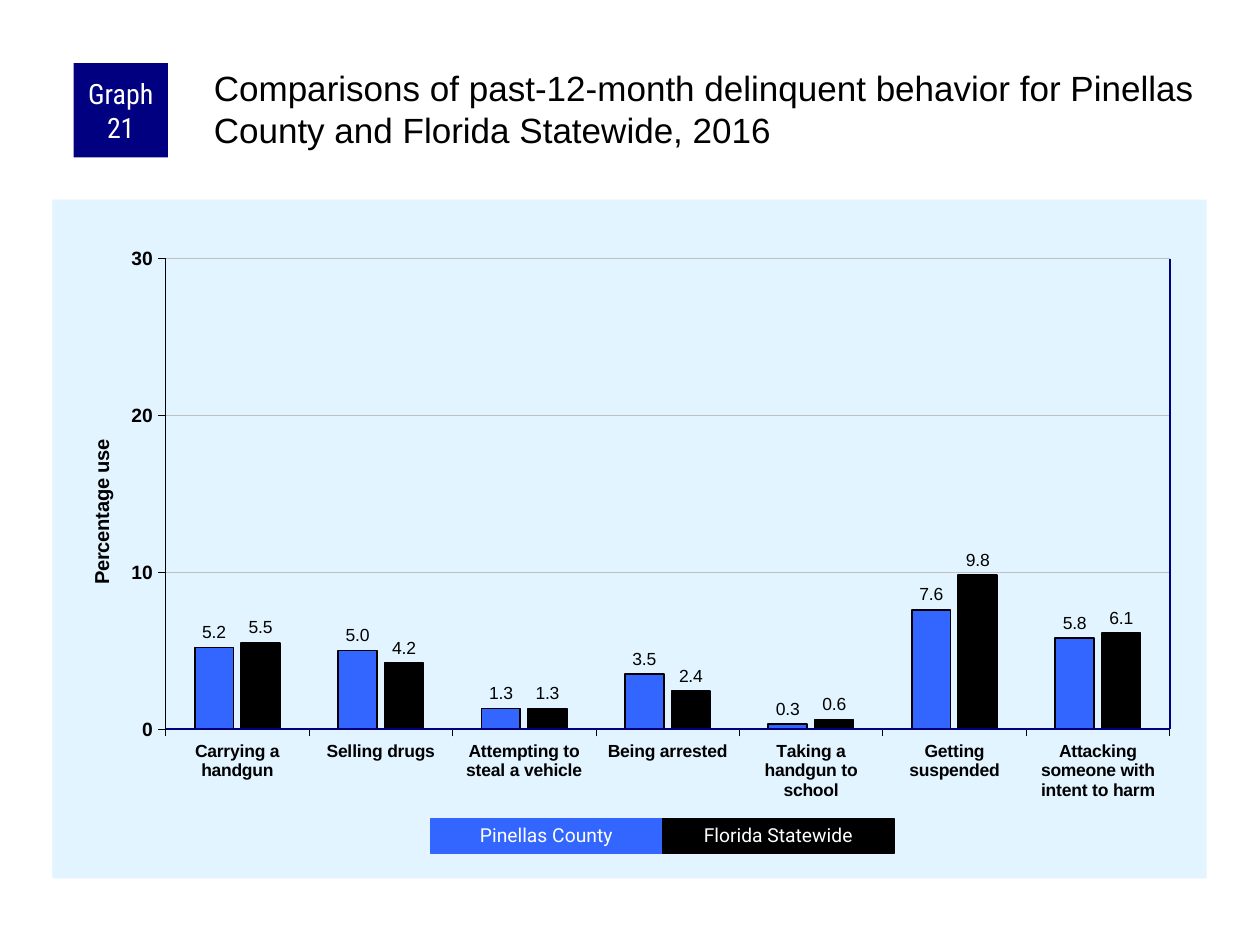
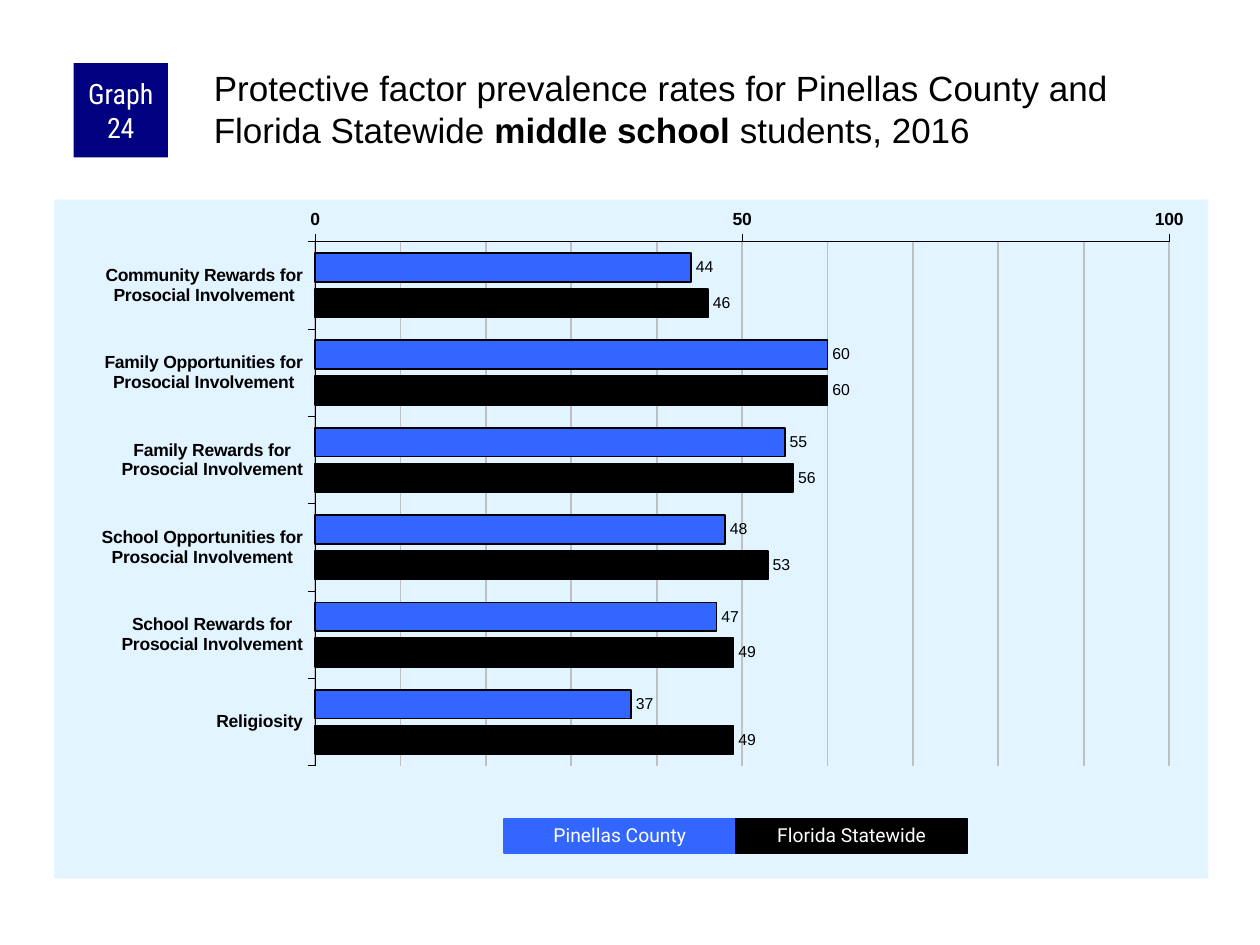
"""Build two slides that compare Pinellas County with Florida Statewide."""
from copy import deepcopy
from lxml import etree
from pptx import Presentation
from pptx.chart.data import CategoryChartData as Data
from pptx.dml.color import RGBColor as Rgb
from pptx.enum.chart import XL_AXIS_CROSSES as Cross
from pptx.enum.chart import XL_CHART_TYPE as Kind
from pptx.enum.chart import XL_LABEL_POSITION as Place
from pptx.enum.chart import XL_TICK_MARK as Tick
from pptx.enum.shapes import MSO_CONNECTOR as Link
from pptx.enum.shapes import MSO_SHAPE as Form
from pptx.enum.text import MSO_ANCHOR as Anchor
from pptx.enum.text import PP_ALIGN as Align
from pptx.oxml import parse_xml
from pptx.oxml.ns import nsdecls, qn
from pptx.util import Pt

HUES = {"navy": "000080", "blue": "3366FF", "black": "000000",
        "white": "FFFFFF", "grid": "C0C0C0", "panel": "E1F4FF"}
WIDE, HIGH, TOP = 659.5, 388, 114
KEYS = [("Pinellas County", "blue"), ("Florida Statewide", "black")]
KEY_W = 132.5

SLIDES = [
    {"badge": "Graph 21",
     "title": [("Comparisons of past-12-month delinquent behavior for "
                "Pinellas County and Florida Statewide, 2016", False)],
     "kind": Kind.COLUMN_CLUSTERED, "left": 30, "key": 246,
     "cats": ["Carrying a handgun", "Selling drugs",
              "Attempting to steal a vehicle", "Being arrested",
              "Taking a handgun to school", "Getting suspended",
              "Attacking someone with intent to harm"],
     "vals": [(5.2, 5, 1.3, 3.5, 0.3, 7.6, 5.8),
              (5.5, 4.2, 1.3, 2.4, 0.6, 9.8, 6.1)],
     "plot": (0.098, 0.087, 0.87, 0.693), "gap": 150, "lap": -20,
     "max": 30, "step": 10, "size": 11, "form": "0.0", "label": 10,
     "grid": 0.25, "edges": [("right", "navy", 1), ("base", "navy", 1)]},
    {"badge": "Graph 24",
     "title": [("Protective factor prevalence rates for Pinellas County "
                "and Florida Statewide ", False),
               ("middle school ", True), ("students, 2016", False)],
     "kind": Kind.BAR_CLUSTERED, "left": 31, "key": 288,
     "cats": ["Community Rewards for\nProsocial Involvement",
              "Family Opportunities for\nProsocial Involvement",
              "Family Rewards for\nProsocial Involvement",
              "School Opportunities for\nProsocial Involvement",
              "School Rewards for\nProsocial Involvement",
              "Religiosity"],
     "vals": [(44, 60, 55, 48, 47, 37), (46, 60, 56, 53, 49, 49)],
     "plot": (0.226, 0.062, 0.74, 0.772), "gap": 80, "lap": -25,
     "max": 100, "step": 50, "size": 10, "form": "0", "label": 9,
     "grid": 1, "edges": [("top", "black", 0.25)]},
]


def style(font, size, hue="black", bold=False, name="Arial"):
    font.size, font.bold, font.name = Pt(size), bold, name
    font.color.rgb = Rgb.from_string(HUES[hue])


def lay(node, spot, **sizes):
    for old in node.findall(qn("c:layout")):
        node.remove(old)
    new = parse_xml(f"<c:layout {nsdecls('c')}><c:manualLayout/></c:layout>")
    tags = {"layoutTarget": "inner"} if "w" in sizes else {}
    tags.update(xMode="edge", yMode="edge", **sizes)
    for tag, val in tags.items():
        etree.SubElement(new[0], qn("c:" + tag)).set("val", str(val))
    node.insert(spot, new)


deck = Presentation()
deck.slide_width, deck.slide_height = Pt(720), Pt(540)

for page in SLIDES:
    shapes = deck.slides.add_slide(deck.slide_layouts[6]).shapes

    data = Data()
    data.categories = page["cats"]
    for num, vals in enumerate(page["vals"], 1):
        data.add_series(f"Series {num}", vals)
    left = page["left"]
    chart = shapes.add_chart(page["kind"], Pt(left), Pt(TOP),
                             Pt(WIDE), Pt(HIGH), data).chart
    chart.has_legend = chart.has_title = False
    style(chart.font, 11.5)
    root = chart.element.find(qn("c:chart"))
    root.addnext(parse_xml(
        f'<c:spPr {nsdecls("c", "a")}><a:solidFill><a:srgbClr '
        f'val="{HUES["panel"]}"/></a:solidFill><a:ln><a:noFill/></a:ln></c:spPr>'))
    px, py, pw, ph = page["plot"]
    lay(root.find(qn("c:plotArea")), 0, x=px, y=py, w=pw, h=ph)

    plot = chart.plots[0]
    plot.gap_width, plot.overlap = page["gap"], page["lap"]
    plot.vary_by_categories = False
    for row, (_, hue) in zip(plot.series, KEYS):
        row.format.fill.solid()
        row.format.fill.fore_color.rgb = Rgb.from_string(HUES[hue])
        row.format.line.color.rgb = Rgb.from_string(HUES["black"])
        row.format.line.width = Pt(1)
        labels = row.data_labels
        labels.show_value = True
        labels.position = Place.OUTSIDE_END
        labels.number_format = page["form"]
        labels.number_format_is_linked = False
        style(labels.font, page["label"])

    cat, val = chart.category_axis, chart.value_axis
    for axis, size in ((cat, 10), (val, page["size"])):
        axis.major_tick_mark, axis.minor_tick_mark = Tick.OUTSIDE, Tick.NONE
        axis.format.line.color.rgb = Rgb.from_string(HUES["black"])
        axis.format.line.width = Pt(0.25)
        style(axis.tick_labels.font, size, bold=True)
    val.minimum_scale, val.maximum_scale = 0, page["max"]
    val.major_unit, val.minor_unit = page["step"], 10
    val.has_major_gridlines = True
    grid = val.major_gridlines.format.line
    grid.color.rgb = Rgb.from_string(HUES["grid"])
    grid.width = Pt(page["grid"])
    if page["kind"] == Kind.BAR_CLUSTERED:
        cat.reverse_order = True
        cat.crosses = Cross.MAXIMUM
        major = root.find(".//" + qn("c:majorGridlines"))
        minor = etree.Element(qn("c:minorGridlines"))
        minor.append(deepcopy(major[0]))
        major.addnext(minor)
    else:
        run = val.axis_title.text_frame.paragraphs[0].add_run()
        run.text = "Percentage use"
        style(run.font, 11.5, bold=True)
        lay(val.axis_title.element, 1, x=0.028, y=0.348)

    x1, y1 = left + px * WIDE, TOP + py * HIGH
    x2, y2 = x1 + pw * WIDE, y1 + ph * HIGH
    sides = {"right": (x2, y1, x2, y2), "base": (x1, y2, x2, y2),
             "top": (x1, y1, x2, y1)}
    for side, hue, width in page["edges"]:
        edge = shapes.add_connector(Link.STRAIGHT, *map(Pt, sides[side]))
        edge.line.color.rgb = Rgb.from_string(HUES[hue])
        edge.line.width = Pt(width)
        etree.SubElement(edge.element.spPr, qn("a:effectLst"))

    boxes = [(page["badge"], "navy", 42, 36, 54, 54, 16, "Roboto Condensed")]
    for num, (text, hue) in enumerate(KEYS):
        boxes.append((text, hue, page["key"] + num * KEY_W, 468,
                      KEY_W, 19.5, 11, "Roboto"))
    for text, hue, x, y, w, h, size, name in boxes:
        box = shapes.add_shape(Form.RECTANGLE, Pt(x), Pt(y), Pt(w), Pt(h))
        box.shadow.inherit = False
        box.fill.solid()
        box.fill.fore_color.rgb = Rgb.from_string(HUES[hue])
        box.line.color.rgb = Rgb.from_string(HUES[hue])
        box.line.width = Pt(0.75)
        frame = box.text_frame
        frame.word_wrap, frame.vertical_anchor = True, Anchor.MIDDLE
        frame.margin_left = frame.margin_right = Pt(3.6)
        frame.margin_top = frame.margin_bottom = 0
        para = frame.paragraphs[0]
        para.alignment = Align.CENTER
        if hue == "navy":
            box.line.fill.background()
        else:
            para.line_spacing = 0.9
        run = para.add_run()
        run.text = text
        style(run.font, size, "white", name=name)

    frame = shapes.add_textbox(Pt(120), Pt(36), Pt(570), Pt(60)).text_frame
    frame.word_wrap = True
    frame.margin_left = frame.margin_top = Pt(2.2)
    frame.margin_right = frame.margin_bottom = 0
    for text, bold in page["title"]:
        run = frame.paragraphs[0].add_run()
        run.text = text
        style(run.font, 20, bold=bold)

deck.save("out.pptx")
